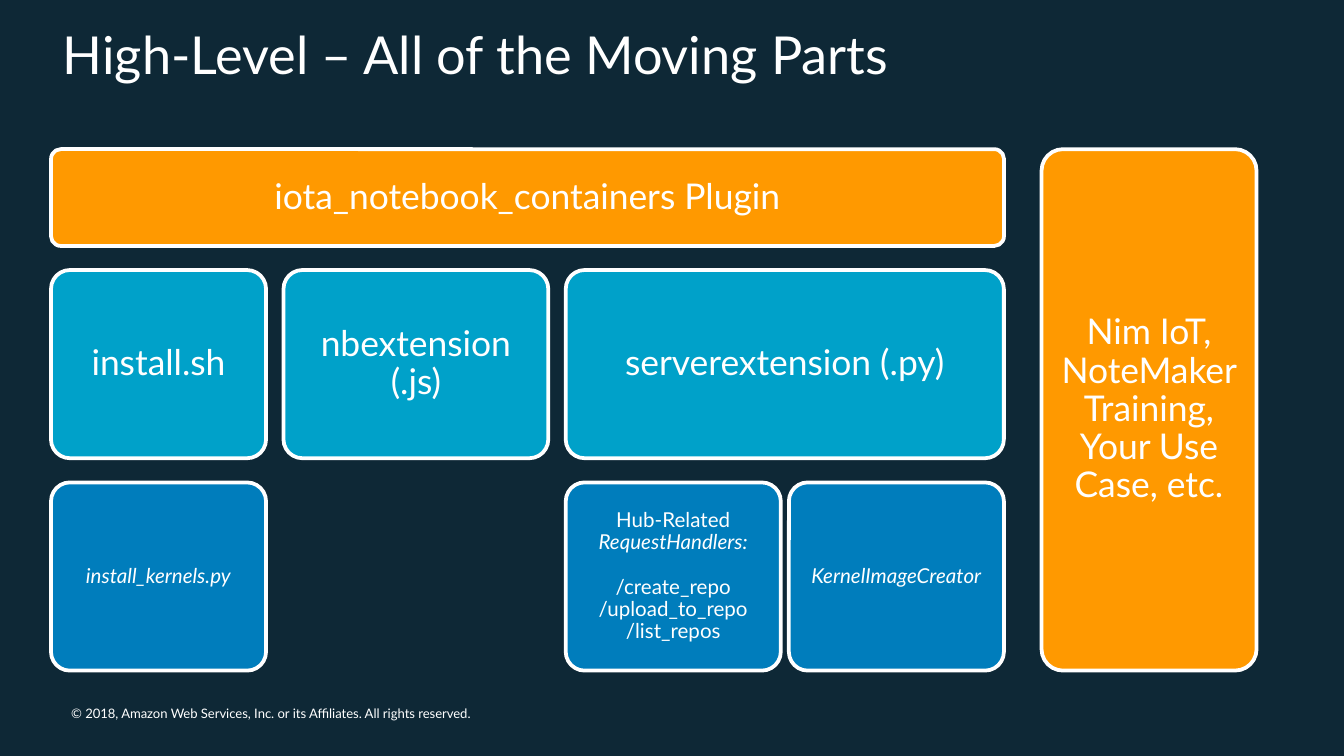
from pptx import Presentation
from pptx.dml.color import RGBColor
from pptx.enum import shapes, text
from pptx.util import Inches, Pt

NAVY = RGBColor(0x0E, 0x28, 0x36)
WHITE = RGBColor(0xFF, 0xFF, 0xFF)
ORANGE = RGBColor(0xFF, 0x99, 0x00)
TEAL = RGBColor(0x00, 0xA1, 0xC9)
BLUE = RGBColor(0x00, 0x7D, 0xBC)
FONT = "Lato"


def style(run, size, slant=False):
    run.font.name = FONT
    run.font.size = Pt(size)
    run.font.italic = slant
    run.font.color.rgb = WHITE


def pad(frame, inset):
    frame.margin_left = frame.margin_right = Inches(inset)
    frame.margin_top = frame.margin_bottom = Inches(inset)


def label(slide, words, size, box, inset=None):
    """Plain line of text in its own box."""
    frame = slide.shapes.add_textbox(*map(Inches, box)).text_frame
    frame.word_wrap = True
    if inset is not None:
        pad(frame, inset)
    frame.text = words
    style(frame.paragraphs[0].runs[0], size)


def card(slide, box, fill, paras, size=19, inset=0.08, slant=False):
    """Rounded card; each paragraph is a list of (words, italic) runs."""
    shape = slide.shapes.add_shape(
        shapes.MSO_SHAPE.ROUNDED_RECTANGLE, *map(Inches, box))
    shape.adjustments[0] = 0.1
    shape.shadow.inherit = False
    shape.fill.solid()
    shape.fill.fore_color.rgb = fill
    shape.line.color.rgb = WHITE
    shape.line.width = Pt(2)
    frame = shape.text_frame
    frame.word_wrap = True
    frame.vertical_anchor = text.MSO_ANCHOR.MIDDLE
    pad(frame, inset)
    for i, runs in enumerate(paras):
        para = frame.add_paragraph() if i else frame.paragraphs[0]
        para.alignment = text.PP_ALIGN.CENTER
        para.line_spacing = 0.9
        if i:
            para.space_before = Pt(12)
        for words, slant in runs:
            for n, line in enumerate(words.split("\n")):
                if n:
                    para.add_line_break()
                run = para.add_run()
                run.text = line
                style(run, size, slant)


def diagram(slide, box):
    """Plugin header, extensions and their parts, with a side column."""
    left, top, width, height = box
    cell, tall, gap = 1.6, 1.4, 0.18
    wide, server = 7.09, 3.26
    mid = top + 0.72 + gap
    low = mid + tall + gap
    right = left + wide

    # Plugin header and use-case column
    card(slide, (left, top, wide, 0.72), ORANGE,
         [[("iota_notebook_containers Plugin", False)]])
    card(slide, (left + width - cell, top, cell, height), ORANGE,
         [[("Nim IoT, NoteMaker Training, Your Use Case, etc.", False)]])

    # Extensions
    for x, w, name in [(left, cell, "install.sh"),
                       (left + 1.73, 1.97, "nbextension (.js)"),
                       (right - server, server, "serverextension (.py)")]:
        card(slide, (x, mid, w, tall), TEAL, [[(name, False)]])

    # Parts under the extensions
    routes = "/create_repo\n/upload_to_repo\n/list_repos"
    for x, paras in [
            (left, [[("install_kernels.py", True)]]),
            (right - server, [[("Hub-Related ", False),
                               ("RequestHandlers:", True)],
                              [(routes, False)]]),
            (right - cell, [[("KernelImageCreator", True)]])]:
        card(slide, (x, low, cell, tall), BLUE, paras, 11, 0.05)


def main():
    prs = Presentation()
    prs.slide_width = Inches(10)
    prs.slide_height = prs.slide_width * 9 // 16
    slide = prs.slides.add_slide(prs.slide_layouts[6])
    slide.background.fill.solid()
    slide.background.fill.fore_color.rgb = NAVY

    label(slide, "High-Level – All of the Moving Parts", 28,
          (0.37, 0.12, 8.97, 0.6))
    diagram(slide, (0.38, 1.11, 8.97, 3.88))
    label(slide, "© 2018, Amazon Web Services, Inc. or its Affiliates. "
          "All rights reserved.", 7, (0.53, 5.25, 3.31, 0.12), 0)
    prs.save("out.pptx")


if __name__ == "__main__":
    main()
